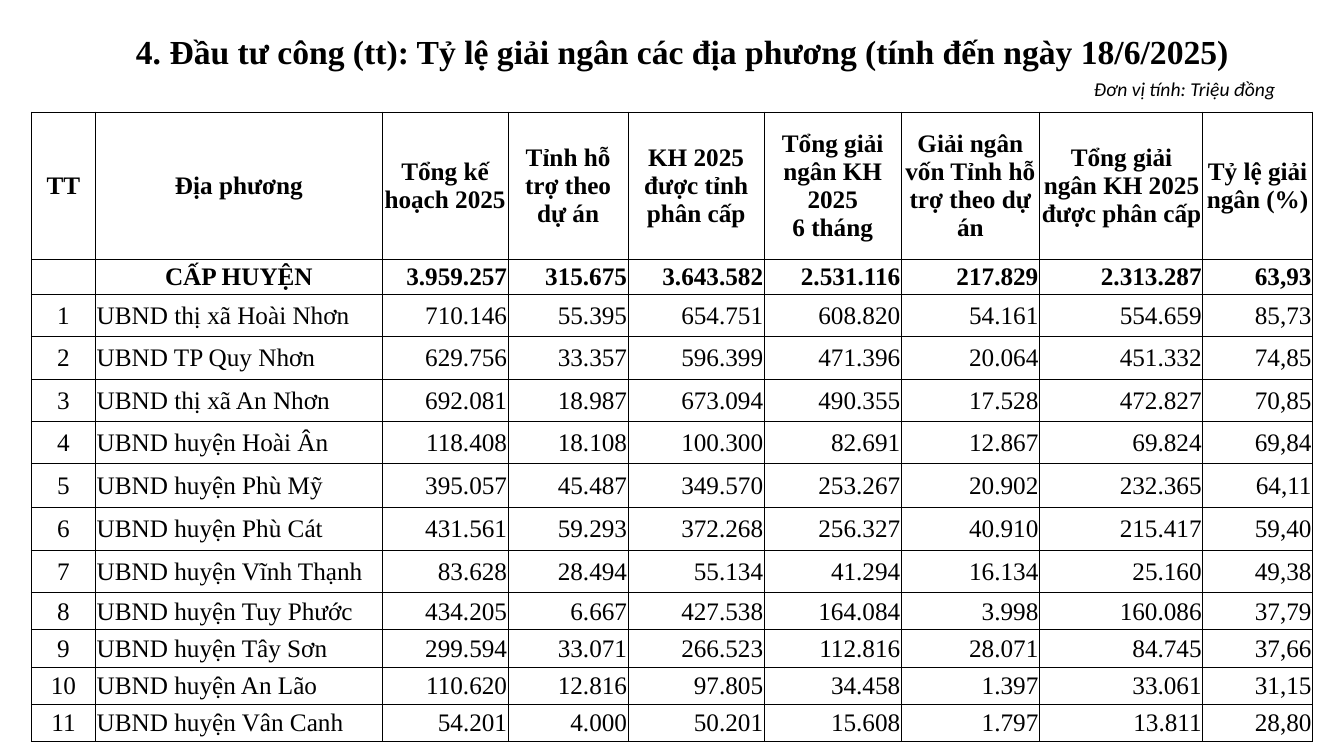
from lxml import etree
from pptx import Presentation
from pptx.dml.color import RGBColor
from pptx.enum.text import MSO_ANCHOR, PP_ALIGN
from pptx.oxml.ns import qn
from pptx.util import Inches, Pt

MIDDLE = MSO_ANCHOR.MIDDLE
LEFT, CENTER, RIGHT, JUSTIFY = PP_ALIGN.LEFT, PP_ALIGN.CENTER, PP_ALIGN.RIGHT, PP_ALIGN.JUSTIFY

SERIF = "Times New Roman"
BLACK = "000000"
PLAIN_TABLE_STYLE = "{2D5ABB26-0587-4C30-8999-92F81FD0307C}"

COL_WIDTHS = [0.64, 2.84, 1.25, 1.19, 1.35, 1.36, 1.37, 1.62, 1.09]
ROW_HEIGHTS = [1.46, 0.35] + [0.42] * 4 + [0.43] * 2 + [0.42] + [0.37] * 4
ALLOCATED_COL = 7

# \n starts a paragraph, \v breaks a line
HEADER = ["TT", "Địa phương", "Tổng kế hoạch 2025", "Tỉnh hỗ trợ theo dự án",
          "KH 2025 được tỉnh phân cấp", "Tổng giải ngân KH 2025\n6 tháng",
          "Giải ngân vốn Tỉnh hỗ trợ theo dự án",
          "Tổng giải ngân KH 2025\vđược phân cấp", "Tỷ lệ giải ngân (%)"]
TOTAL = ["", "CẤP HUYỆN", "3.959.257", "315.675", "3.643.582", "2.531.116",
         "217.829", "2.313.287", "63,93"]
DISTRICTS = [
    ("thị xã Hoài Nhơn", "710.146", "55.395", "654.751", "608.820", "54.161", "554.659", "85,73"),
    ("TP Quy Nhơn", "629.756", "33.357", "596.399", "471.396", "20.064", "451.332", "74,85"),
    ("thị xã An Nhơn", "692.081", "18.987", "673.094", "490.355", "17.528", "472.827", "70,85"),
    ("huyện Hoài Ân", "118.408", "18.108", "100.300", "82.691", "12.867", "69.824", "69,84"),
    ("huyện Phù Mỹ", "395.057", "45.487", "349.570", "253.267", "20.902", "232.365", "64,11"),
    ("huyện Phù Cát", "431.561", "59.293", "372.268", "256.327", "40.910", "215.417", "59,40"),
    ("huyện Vĩnh Thạnh", "83.628", "28.494", "55.134", "41.294", "16.134", "25.160", "49,38"),
    ("huyện Tuy Phước", "434.205", "6.667", "427.538", "164.084", "3.998", "160.086", "37,79"),
    ("huyện Tây Sơn", "299.594", "33.071", "266.523", "112.816", "28.071", "84.745", "37,66"),
    ("huyện An Lão", "110.620", "12.816", "97.805", "34.458", "1.397", "33.061", "31,15"),
    ("huyện Vân Canh", "54.201", "4.000", "50.201", "15.608", "1.797", "13.811", "28,80"),
]


def rgb(color):
    return RGBColor.from_string(color)


def format_text(tf, size, font=SERIF, bold=False, italic=False, align=LEFT):
    for p in tf.paragraphs:
        p.alignment = align
        for r in p.runs:
            r.font.name = font
            r.font.size = Pt(size)
            r.font.bold = bold
            r.font.italic = italic
            r.font.color.rgb = rgb(BLACK)


def add_title(s, text, left, top, width, height):
    tf = s.shapes.add_textbox(Inches(left), Inches(top), Inches(width), Inches(height)).text_frame
    tf.word_wrap = True
    tf.margin_top = Inches(0.06)
    tf.text = text
    format_text(tf, 24, bold=True)


def add_plain_table(s, left, top, widths, heights):
    table = s.shapes.add_table(len(heights), len(widths), Inches(left), Inches(top),
                               Inches(sum(widths)), Inches(sum(heights))).table
    table.first_row = table.horz_banding = False
    table._tbl.tblPr.find(qn("a:tableStyleId")).text = PLAIN_TABLE_STYLE
    for column, width in zip(table.columns, widths):
        column.width = Inches(width)
    for row, height in zip(table.rows, heights):
        row.height = Inches(height)
    return table


def add_borders(cell, color, width):
    tc_pr = cell._tc.get_or_add_tcPr()
    for side in ("lnL", "lnR", "lnT", "lnB"):
        line = etree.SubElement(tc_pr, qn(f"a:{side}"), w=str(Pt(width)))
        fill = etree.SubElement(line, qn("a:solidFill"))
        etree.SubElement(fill, qn("a:srgbClr"), val=color)


def fill_cell(cell, text, bold, align):
    cell.text = text
    cell.vertical_anchor = MIDDLE
    cell.margin_left = cell.margin_right = cell.margin_top = Inches(0.01)
    cell.margin_bottom = 0
    add_borders(cell, BLACK, 0.5)
    cell.fill.background()
    format_text(cell.text_frame, 18, bold=bold, align=align)


def cell_align(row, col):
    if row == 0 or col == 0:
        return CENTER
    if col == 1:
        return CENTER if row == 1 else LEFT
    return RIGHT


def add_disbursement_table(s, left, top):
    rows = [HEADER, TOTAL]
    for number, (name, *values) in enumerate(DISTRICTS, 1):
        rows.append([str(number), f"UBND {name}", *values])
    table = add_plain_table(s, left, top, COL_WIDTHS, ROW_HEIGHTS)
    for i, row in enumerate(rows):
        for j, text in enumerate(row):
            fill_cell(table.cell(i, j), text, i < 2, cell_align(i, j))
    # Narrower line so that the heading wraps after "giải"
    table.cell(0, ALLOCATED_COL).margin_left = Inches(0.02)


def add_unit_table(s, text, left, top):
    table = add_plain_table(s, left, top, [2.44], [0.33, 0.23])
    for cell in table.iter_cells():
        cell.fill.background()
    cell = table.cell(0, 0)
    cell.text = text
    cell.vertical_anchor = MIDDLE
    format_text(cell.text_frame, 14, font="Calibri", italic=True, align=JUSTIFY)
    cell.text_frame.paragraphs[0].space_after = Pt(12)


def main():
    prs = Presentation()
    prs.slide_width, prs.slide_height = Inches(13.33), Inches(7.5)
    s = prs.slides.add_slide(prs.slide_layouts[6])

    # Title
    add_title(s, "4. Đầu tư công (tt): Tỷ lệ giải ngân các địa phương (tính đến ngày 18/6/2025)",
              1.25, 0.25, 11.4, 0.78)

    # Disbursement by district
    add_disbursement_table(s, 0.31, 1.11)

    # Unit note
    add_unit_table(s, "Đơn vị tính: Triệu đồng", 10.75, 0.72)

    prs.save("out.pptx")


if __name__ == "__main__":
    main()
